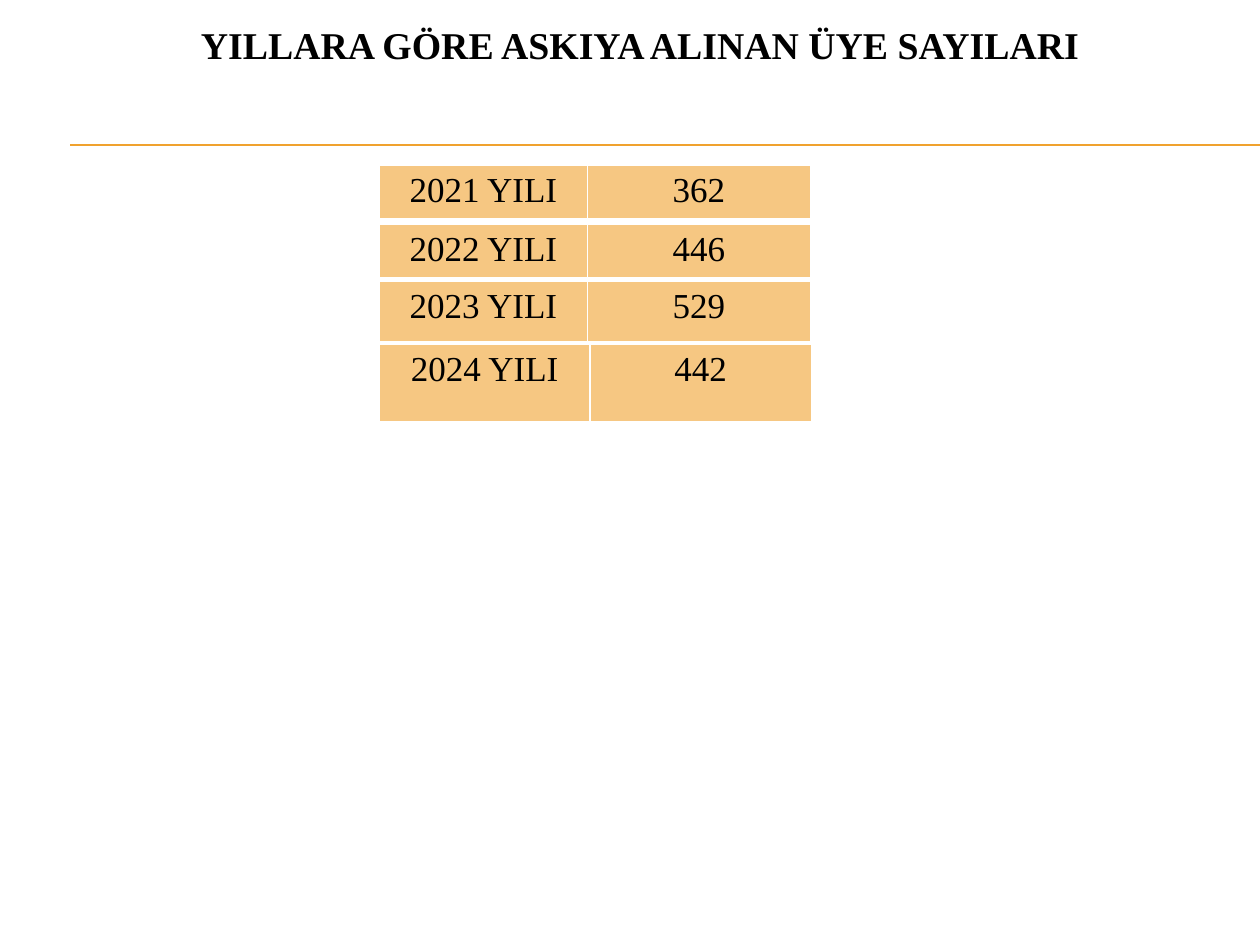
import pptx
import pptx.dml.color
import pptx.enum.shapes
import pptx.enum.text
import pptx.oxml
import pptx.oxml.ns
import pptx.util
from pptx.util import Cm

FONT = "Times New Roman"
BLACK, WHITE, ORANGE, LIGHT_ORANGE = "000000", "FFFFFF", "F0A22E", "F6C782"
TABLE_LEFT = 7.65
BORDERS = {"lnL": 1, "lnR": 1, "lnT": 1, "lnB": 3}

# Year, member count, top, row height, column widths (cm)
YEARS = [
    ("2021 YILI", "362", 3.33, 0.99, (4.19, 4.5)),
    ("2022 YILI", "446", 4.52, 0.79, (4.19, 4.5)),
    ("2023 YILI", "529", 5.66, 1.27, (4.19, 4.5)),
    ("2024 YILI", "442", 6.93, 1.6, (4.24, 4.47)),
]


def color(value):
    return pptx.dml.color.RGBColor.from_string(value)


def add_text(text_frame, text, size, bold=False):
    paragraph = text_frame.paragraphs[0]
    paragraph.alignment = pptx.enum.text.PP_ALIGN.CENTER
    run = paragraph.add_run()
    run.text = text
    run.font.name = FONT
    run.font.size = pptx.util.Pt(size)
    run.font.bold = bold
    run.font.color.rgb = color(BLACK)


def add_title(slide, text):
    shape = slide.shapes.add_textbox(Cm(0.84), Cm(0.33), Cm(24.13), Cm(1.14))
    text_frame = shape.text_frame
    text_frame.word_wrap = True
    text_frame.vertical_anchor = pptx.enum.text.MSO_ANCHOR.MIDDLE
    add_text(text_frame, text, 21.6, bold=True)


def add_rule(slide, top):
    connector = slide.shapes.add_connector(
        pptx.enum.shapes.MSO_CONNECTOR.STRAIGHT, Cm(1.42), Cm(top), Cm(25.4), Cm(top))
    connector.line.color.rgb = color(ORANGE)
    connector.line.width = pptx.util.Pt(0.75)
    properties = connector._element.spPr
    properties.append(pptx.oxml.parse_xml(
        f'<a:effectLst {pptx.oxml.ns.nsdecls("a")}/>'))


def set_borders(cell):
    properties = cell._tc.get_or_add_tcPr()
    for index, (side, points) in enumerate(BORDERS.items()):
        properties.insert(index, pptx.oxml.parse_xml(
            f'<a:{side} {pptx.oxml.ns.nsdecls("a")} w="{pptx.util.Pt(points)}">'
            f'<a:solidFill><a:srgbClr val="{WHITE}"/></a:solidFill></a:{side}>'))


def add_year_table(slide, year, count, top, height, widths):
    table = slide.shapes.add_table(
        1, 2, Cm(TABLE_LEFT), Cm(top), Cm(sum(widths)), Cm(height)).table
    for column, width in zip(table.columns, widths):
        column.width = Cm(width)
    for cell, text in zip(table.rows[0].cells, (year, count)):
        cell.fill.solid()
        cell.fill.fore_color.rgb = color(LIGHT_ORANGE)
        set_borders(cell)
        add_text(cell.text_frame, text, 20)


def main():
    presentation = pptx.Presentation()
    presentation.slide_width = Cm(25.4)
    presentation.slide_height = Cm(19.05)
    slide = presentation.slides.add_slide(presentation.slide_layouts[6])

    # Double rule under the title
    for top in (2.92, 2.94):
        add_rule(slide, top)
    add_title(slide, "YILLARA GÖRE ASKIYA ALINAN ÜYE SAYILARI")

    # One table for each year
    for row in YEARS:
        add_year_table(slide, *row)

    presentation.save("out.pptx")


if __name__ == "__main__":
    main()
